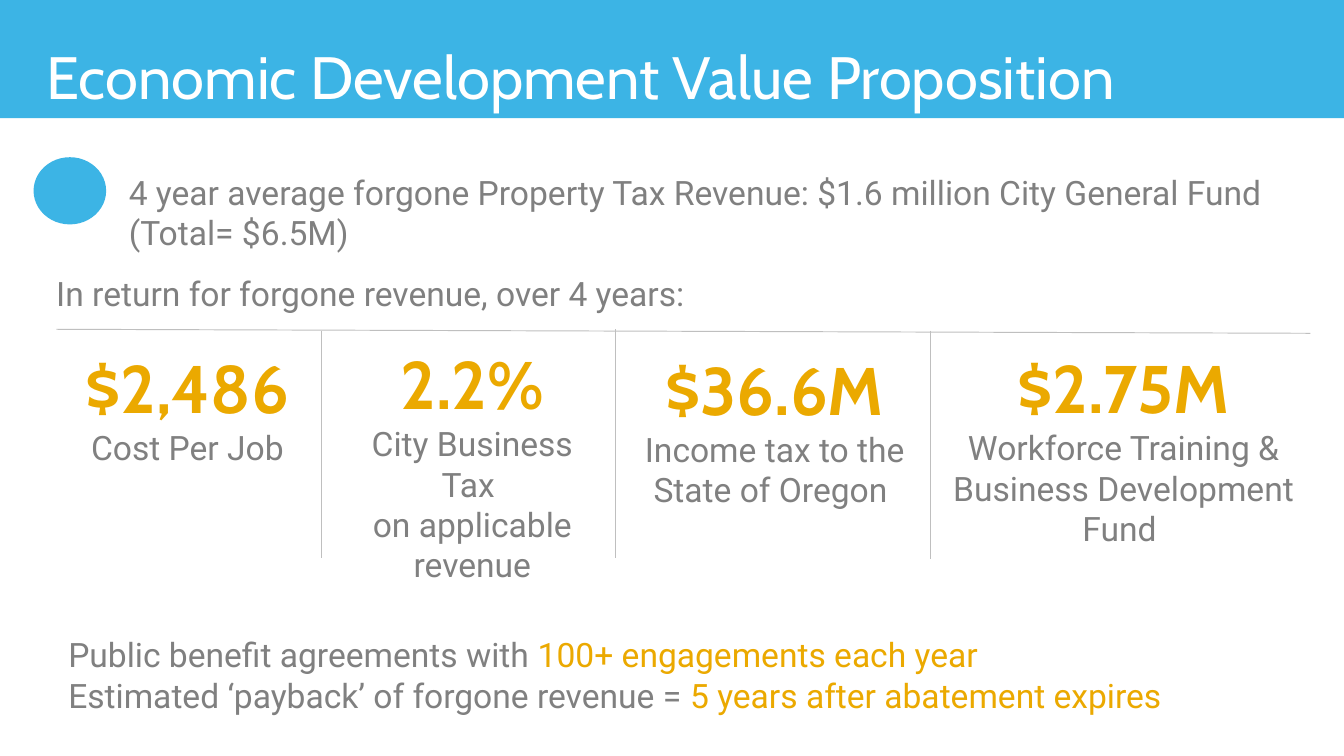
from lxml.etree import SubElement
from pptx import Presentation
from pptx.dml.color import RGBColor
from pptx.enum.shapes import MSO_CONNECTOR, MSO_SHAPE
from pptx.enum.text import PP_ALIGN
from pptx.oxml.ns import qn
from pptx.util import Inches, Pt

BLUE = RGBColor(0x3C, 0xB4, 0xE5)
GOLD = RGBColor(0xEB, 0xA9, 0x00)
GRAY = RGBColor(0x80, 0x80, 0x80)
RULE = RGBColor(0xBF, 0xBF, 0xBF)
WHITE = RGBColor(0xFF, 0xFF, 0xFF)

TITLE = {"name": "Cabin", "size": Pt(32), "color": WHITE}
FIGURE = {"name": "Cabin", "size": Pt(36), "bold": True, "color": GOLD}
BODY = {"name": "Roboto", "size": Pt(18), "color": GRAY}
ACCENT = {**BODY, "color": GOLD}
SPACER = {**BODY, "size": Pt(16)}


def add_formatted_run(paragraph, text, formatting):
    run = paragraph.add_run()
    run.text = text
    for attribute, value in formatting.items():
        if attribute == "color":
            run.font.color.rgb = value
        else:
            setattr(run.font, attribute, value)


def add_text(slide, box, paragraphs, alignment=PP_ALIGN.LEFT):
    shape = slide.shapes.add_textbox(*map(Inches, box))
    frame = shape.text_frame
    frame.word_wrap = True
    for index, lines in enumerate(paragraphs):
        paragraph = frame.add_paragraph() if index else frame.paragraphs[0]
        paragraph.alignment = alignment
        for line_index, runs in enumerate(lines):
            if line_index:
                paragraph.add_line_break()
            for text, formatting in runs:
                add_formatted_run(paragraph, text, formatting)


presentation = Presentation()
presentation.slide_width = Inches(10)
presentation.slide_height = presentation.slide_width * 9 // 16
slide = presentation.slides.add_slide(presentation.slide_layouts[6])

for preset, box in [
    (MSO_SHAPE.RECTANGLE, (0, 0, 10, 0.88)),
    (MSO_SHAPE.OVAL, (0.25, 1.17, 0.54, 0.5)),
]:
    shape = slide.shapes.add_shape(preset, *map(Inches, box))
    shape.shadow.inherit = False
    shape.fill.solid()
    shape.fill.fore_color.rgb = BLUE
    shape.line.fill.background()

for box, text, formatting in [
    ((0.25, 0.25, 9.5, 0.64), "Economic Development Value Proposition", TITLE),
    (
        (0.86, 1.23, 9.05, 0.5),
        "4 year average forgone Property Tax Revenue: "
        "$1.6 million City General Fund (Total= $6.5M)",
        BODY,
    ),
    ((0.32, 1.98, 9.5, 0.38), "In return for forgone revenue, over 4 years:", BODY),
]:
    add_text(slide, box, [[[(text, formatting)]]])

for ends in [
    (0.42, 2.45, 9.75, 2.48),
    (2.39, 2.46, 2.39, 4.15),
    (4.58, 2.45, 4.58, 4.15),
    (6.92, 2.46, 6.92, 4.16),
]:
    connector = slide.shapes.add_connector(MSO_CONNECTOR.STRAIGHT, *map(Inches, ends))
    connector.line.color.rgb = RULE
    connector.line.width = Pt(0.5)
    SubElement(connector._element.spPr, qn("a:effectLst"))

for box, lines in [
    ((0.41, 2.53, 1.97, 1.62), [[("$2,486", FIGURE), (" Cost Per Job", BODY)]]),
    (
        (2.5, 2.5, 2.03, 1.62),
        [
            [("2.2%", FIGURE)],
            [("City Business Tax ", BODY)],
            [("on applicable revenue", BODY)],
        ],
    ),
    (
        (4.65, 2.54, 2.23, 1.31),
        [[("$36.6M", FIGURE), (" ", SPACER), ("Income tax to the State of Oregon ", BODY)]],
    ),
    (
        (6.97, 2.53, 2.78, 1.62),
        [
            [
                ("$2.75M", FIGURE),
                (" ", SPACER),
                ("Workforce Training & Business Development Fund ", BODY),
            ]
        ],
    ),
]:
    add_text(slide, box, [lines], PP_ALIGN.CENTER)

outcomes = [
    ("Public benefit agreements with ", "100+ engagements each year"),
    ("Estimated ‘payback’ of forgone revenue = ", "5 years after abatement expires"),
]
add_text(
    slide,
    (0.41, 4.67, 9.66, 0.71),
    [[[(lead, BODY), (result, ACCENT)]] for lead, result in outcomes],
)

presentation.save("out.pptx")
